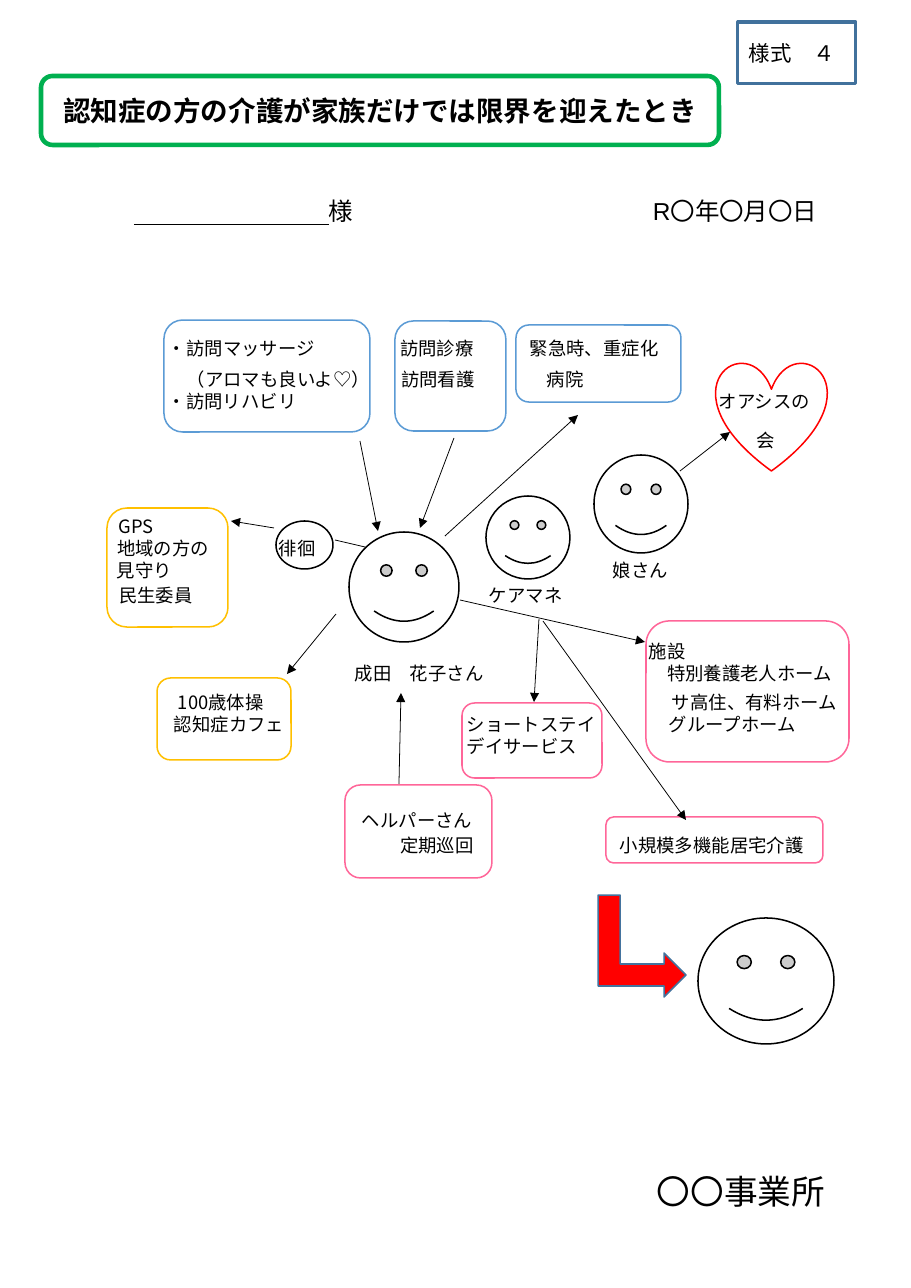
from lxml.etree import SubElement
from pptx import Presentation
from pptx.dml.color import RGBColor
from pptx.enum.shapes import MSO_CONNECTOR, MSO_SHAPE
from pptx.enum.text import MSO_ANCHOR, PP_ALIGN
from pptx.oxml.ns import qn
from pptx.util import Pt

SCALE = 914400 / 110.2  # EMU per px
WIDTH, HEIGHT = 911, 1288
CJK, LATIN = "Noto Sans CJK JP", "Arial"
COLORS = {
    "black": "000000", "white": "FFFFFF", "red": "FF0000", "green": "00B050",
    "blue": "5B9BD5", "yellow": "FFC000", "pink": "FF6699",
    "frame": "41719C", "arrow": "43739E",
}

TITLE = "認知症の方の介護が家族だけでは限界を迎えたとき"
TITLE_BOX = (41, 76, 678, 69)
FORM_NO = "様式　４"
FORM_BOX = (738, 22, 118, 62)
BENT_ARROW = (591, 902, 102, 88)

# Shapes by kind and line colour: left, top, width, height
SHAPES = [
    (MSO_SHAPE.ROUNDED_RECTANGLE, "blue",
     [(164, 320, 206, 112), (395, 321, 111, 110), (516, 325, 165, 77)]),
    (MSO_SHAPE.ROUNDED_RECTANGLE, "yellow",
     [(107, 508, 121, 119), (157, 678, 134, 82)]),
    (MSO_SHAPE.ROUNDED_RECTANGLE, "pink",
     [(345, 785, 147, 93), (462, 703, 140, 75), (646, 621, 203, 141),
      (606, 817, 217, 46)]),
    (MSO_SHAPE.OVAL, "black", [(276, 521, 57, 48)]),
    (MSO_SHAPE.HEART, "red", [(716, 362, 111, 109)]),
    (MSO_SHAPE.SMILEY_FACE, "black",
     [(349, 532, 110, 110), (486, 496, 84, 83), (594, 455, 94, 98),
      (698, 918, 136, 126)]),
]

# Lines: x1, y1, x2, y2
ARROWS = [
    (360, 441, 378, 531), (454, 438, 420, 528), (445, 536, 578, 415),
    (274, 528, 231, 521), (336, 614, 287, 674), (399, 784, 401, 693),
    (460, 600, 645, 642), (539, 619, 534, 702), (543, 621, 686, 820),
    (680, 471, 730, 432),
]
PLAIN_LINES = [(365, 547, 335, 540), (134, 224, 329, 224)]

# Labels: text, left, middle, size
LABELS = [
    ("様", 329, 211, 16), ("R〇年〇月〇日", 653, 211, 16),
    ("・訪問マッサージ", 168, 348, 12), ("（アロマも良いよ♡）", 187, 379, 12),
    ("・訪問リハビリ", 168, 401, 12),
    ("訪問診療", 400, 348, 12), ("訪問看護", 401, 379, 12),
    ("緊急時、重症化", 530, 348, 12), ("病院", 547, 379, 12),
    ("オアシスの", 719, 401, 12), ("会", 757, 440, 12),
    ("GPS", 119, 526, 12), ("地域の方の", 117, 548, 12),
    ("見守り", 117, 570, 12), ("民生委員", 119, 595, 12),
    ("徘徊", 279, 548, 12), ("娘さん", 613, 570, 12),
    ("ケアマネ", 489, 595, 12), ("成田　花子さん", 355, 673, 12),
    ("施設", 649, 651, 12), ("特別養護老人ホーム", 667, 673, 12),
    ("サ高住、有料ホーム", 672, 702, 12), ("グループホーム", 669, 724, 12),
    ("100歳体操", 178, 702, 12), ("認知症カフェ", 174, 724, 12),
    ("ショートステイ", 467, 724, 12), ("デイサービス", 467, 746, 12),
    ("ヘルパーさん", 362, 820, 12), ("定期巡回", 400, 845, 12),
    ("小規模多機能居宅介護", 620, 845, 12),
    ("〇〇事業所", 657, 1191, 22),
]


def px(*values):
    return [round(v * SCALE) for v in values]


def rgb(name):
    return RGBColor.from_string(COLORS[name])


def write(s, text, size, latin=CJK, bold=False, align=PP_ALIGN.LEFT, margin=0):
    tf = s.text_frame
    tf.text = text
    tf.word_wrap = True
    tf.vertical_anchor = MSO_ANCHOR.MIDDLE
    tf.margin_left = tf.margin_right = px(margin)[0]
    tf.margin_top = tf.margin_bottom = 0
    p = tf.paragraphs[0]
    p.alignment = align
    r = p.runs[0]
    r.font.size, r.font.bold, r.font.name = Pt(size), bold, latin
    r.font.color.rgb = rgb("black")
    SubElement(r.font._element, qn("a:ea"), typeface=CJK)


def add_shape(kind, box, line, width=1, fill="white"):
    s = shapes.add_shape(kind, *px(*box))
    s.shadow.inherit = False
    if fill:
        s.fill.solid()
        s.fill.fore_color.rgb = rgb(fill)
    else:
        s.fill.background()
    s.line.color.rgb = rgb(line)
    s.line.width = Pt(width)
    return s


def add_line(ends, head):
    c = shapes.add_connector(MSO_CONNECTOR.STRAIGHT, *px(*ends))
    c.line.color.rgb = rgb("black")
    c.line.width = Pt(0.5)
    if head:
        SubElement(c.line._get_or_add_ln(), qn("a:tailEnd"), type="triangle")
    SubElement(c._element.spPr, qn("a:effectLst"))


prs = Presentation()
prs.slide_width, prs.slide_height = px(WIDTH, HEIGHT)
shapes = prs.slides.add_slide(prs.slide_layouts[5]).shapes

# Title and form number
title = shapes.title
title.left, title.top, title.width, title.height = px(*TITLE_BOX)
write(title, TITLE, 18, bold=True, align=PP_ALIGN.CENTER)
add_shape(MSO_SHAPE.ROUNDED_RECTANGLE, TITLE_BOX, "green", 3, fill=None)
form = add_shape(MSO_SHAPE.RECTANGLE, FORM_BOX, "frame", 2, fill=None)
write(form, FORM_NO, 14, margin=11)

# Care network
for kind, color, boxes in SHAPES:
    for box in boxes:
        add_shape(kind, box, color)
for ends in ARROWS:
    add_line(ends, True)
for ends in PLAIN_LINES:
    add_line(ends, False)
bent = add_shape(MSO_SHAPE.BENT_UP_ARROW, BENT_ARROW, "arrow", fill="red")
bent.rotation = 90

# Labels, each centred on its middle line
for text, left, middle, size in LABELS:
    width, height = len(text) * size * 1.6 + 12, size * 2.4
    tb = shapes.add_textbox(*px(left, middle - height / 2, width, height))
    write(tb, text, size, latin=LATIN if text.startswith("R") else CJK)

prs.save("out.pptx")
